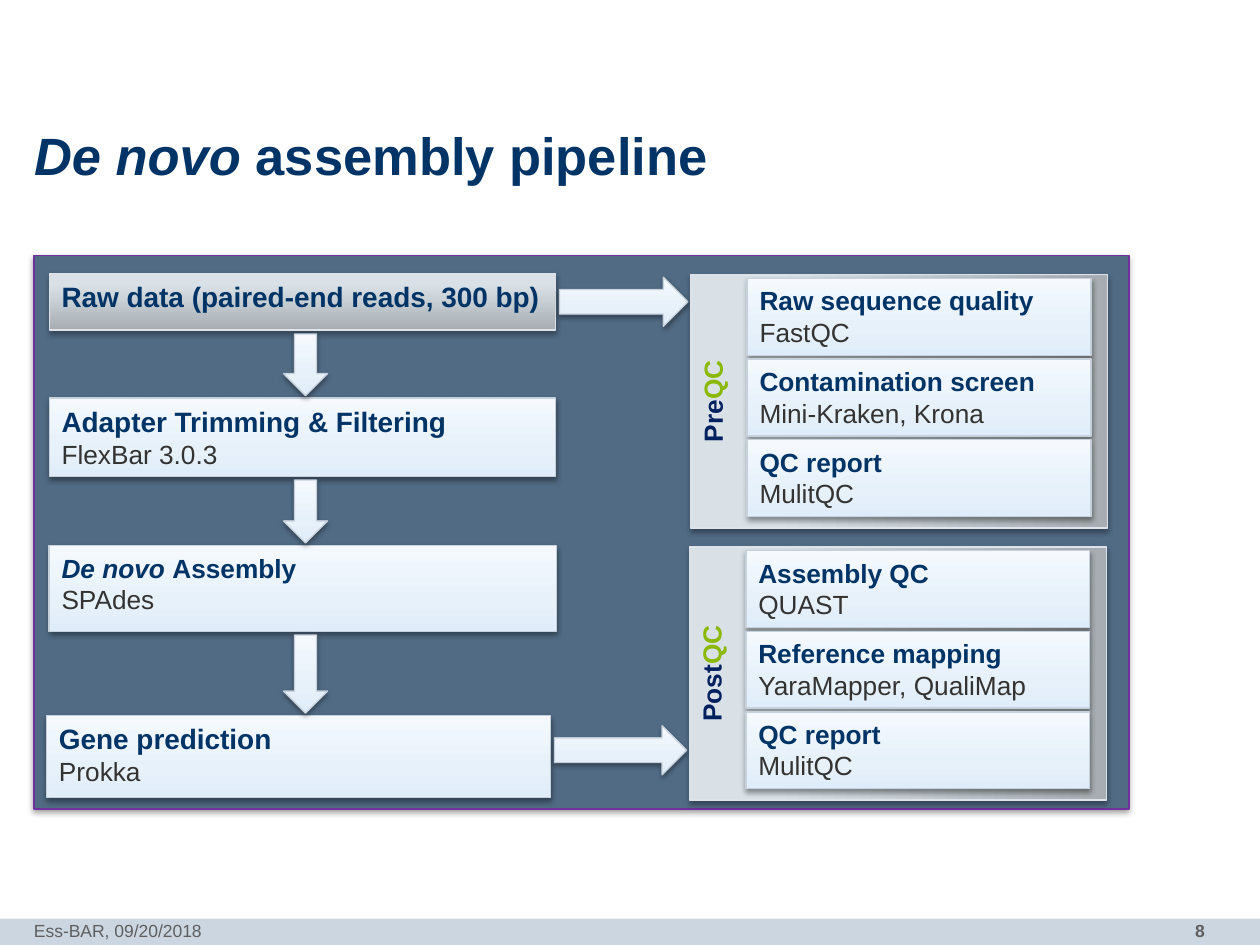
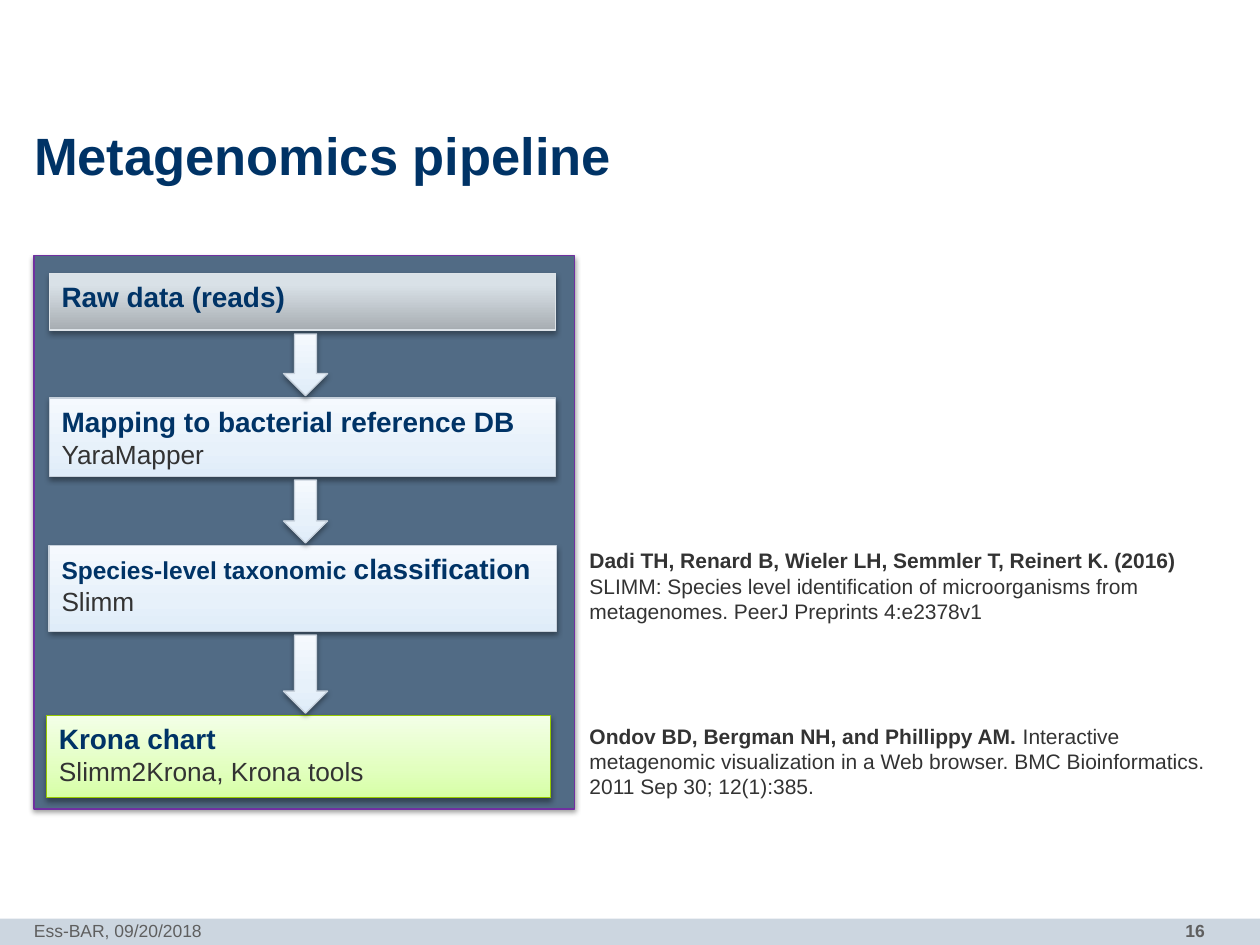
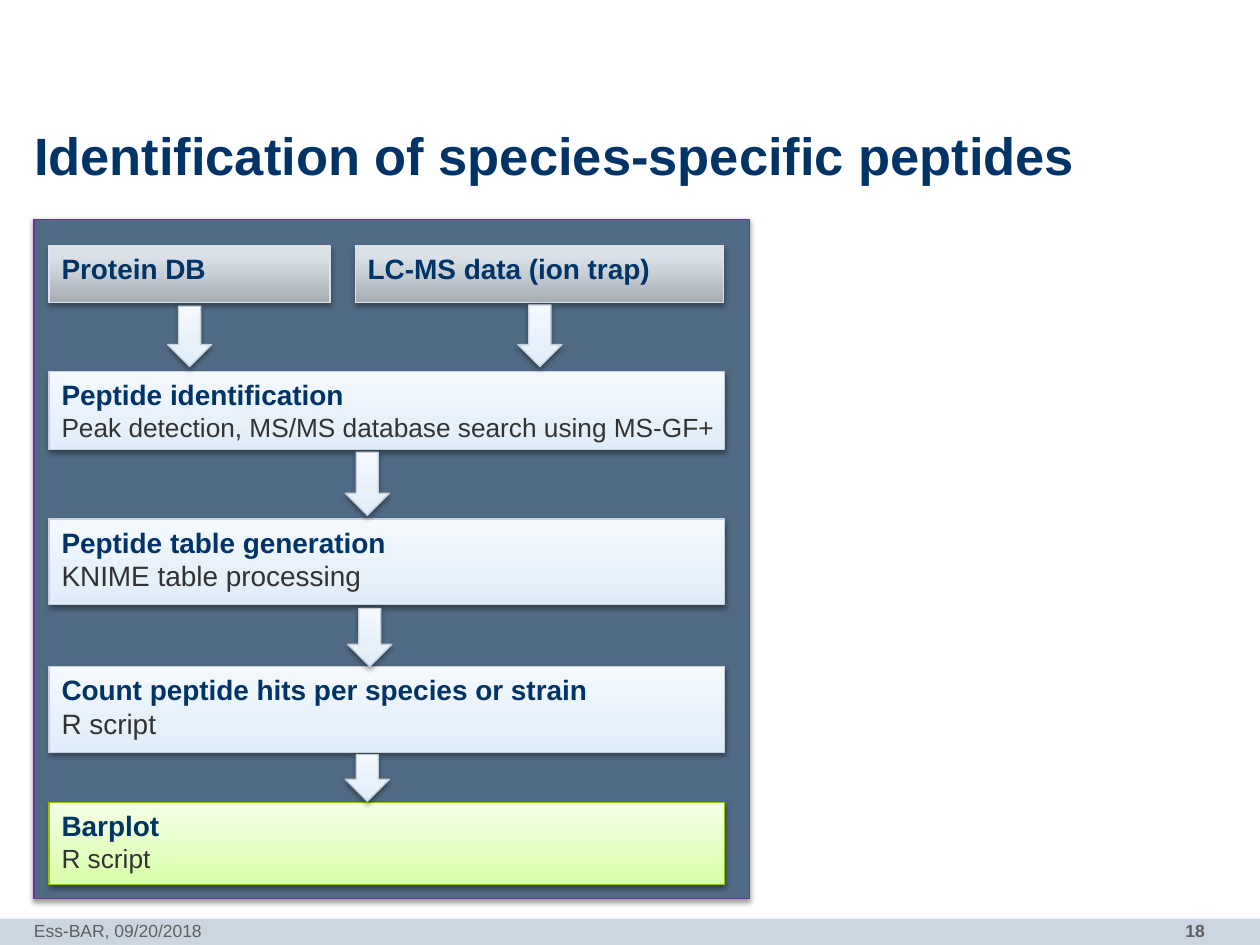
from dataclasses import dataclass

from lxml.etree import SubElement as Sub
from pptx import Presentation
from pptx.dml.color import RGBColor as RGB
from pptx.enum.shapes import MSO_SHAPE as Kind
from pptx.enum.text import MSO_ANCHOR as Anchor, PP_ALIGN as Align
from pptx.oxml.ns import qn
from pptx.util import Inches, Pt


@dataclass(frozen=True)
class Look:
    line: str
    stops: tuple
    alpha: int = 38
    drop: float = 1.6


@dataclass(frozen=True)
class Theme:
    font: str = "Arial"
    navy: str = "003366"
    ink: str = "333333"
    tag: str = "002060"
    lime: str = "8AB900"
    gray: str = "5F5F5F"
    band: str = "CCD6E0"
    title: int = 30
    head: int = 16
    body: int = 15
    sub: int = 14
    note: int = 12
    foot: int = 10
    board: Look = Look("7030A0", ((0, "516B85"),))
    blue: Look = Look("C7D1DC", ((0, "DFECF9"), (35, "E7F1FA"), (100, "F5F9FE")))
    green: Look = Look("96C800", ((0, "D6FFA5"), (35, "E2FFBF"), (100, "F3FFE7")))
    steel: Look = Look("DDE3E8", ((0, "A7ADB2"), (80, "D9E1E7"), (100, "DAE2E9")), 35, 1.8)


class Deck:
    """Builds pipeline slides in one shared style."""

    def __init__(self, theme):
        self.theme = theme
        self.file = Presentation()
        self.file.slide_width, self.file.slide_height = Inches(10), Inches(7.5)
        self.slide = None

    def start(self, title, page):
        t = self.theme
        self.slide = self.file.slides.add_slide(self.file.slide_layouts[6])
        band = self.slide.shapes.add_shape(Kind.RECTANGLE, *map(Inches, (0, 7.29, 10, 0.21)))
        band.shadow.inherit = False
        band.fill.solid()
        band.fill.fore_color.rgb = RGB.from_string(t.band)
        band.line.fill.background()
        num = self.text((8.32, 7.25, 1.34, 0.26), str(page), t.foot, t.gray, True)
        num.paragraphs[0].alignment = Align.RIGHT
        frame = self.text((0.27, 1.03, 9.45, 0.47), title, t.title, t.navy, True)
        frame.margin_left = frame.margin_right = frame.margin_top = frame.margin_bottom = 0
        frame.vertical_anchor = Anchor.MIDDLE
        frame.paragraphs[0].line_spacing = 0.85
        foot = self.text((0.27, 7.25, 6.54, 0.25), "Ess-BAR, 09/20/2018", t.foot, t.gray)
        foot.margin_left = foot.margin_right = 0

    def label(self, para, text, size, color, bold=False):
        font = para.font
        font.name, font.size, font.bold = self.theme.font, Pt(size), bold
        font.color.rgb = RGB.from_string(color)
        for part, style in [(text, {})] if isinstance(text, str) else text:
            run = para.add_run()
            run.text = part
            for key, value in style.items():
                if key == "color":
                    run.font.color.rgb = RGB.from_string(value)
                else:
                    setattr(run.font, key, value)

    def text(self, place, text, size, color, bold=False):
        frame = self.slide.shapes.add_textbox(*map(Inches, place)).text_frame
        frame.word_wrap = True
        self.label(frame.paragraphs[0], text, size, color, bold)
        return frame

    def shape(self, place, look, kind=Kind.RECTANGLE):
        shape = self.slide.shapes.add_shape(kind, *map(Inches, place))
        shape.line.color.rgb = RGB.from_string(look.line)
        shape.line.width = Pt(0.75)
        props = shape.element.spPr
        if len(look.stops) == 1:
            shape.fill.solid()
            shape.fill.fore_color.rgb = RGB.from_string(look.stops[0][1])
        else:
            shape.fill.gradient()
            shape.fill.gradient_angle = 90
            stops = props.find(qn("a:gradFill")).find(qn("a:gsLst"))
            for old in list(stops):
                stops.remove(old)
            for pos, color in look.stops:
                stop = Sub(stops, qn("a:gs"), pos=str(pos * 1000))
                Sub(stop, qn("a:srgbClr"), val=color)
        shape.shadow.inherit = False
        shade = Sub(props.find(qn("a:effectLst")), qn("a:outerShdw"), blurRad=str(Pt(3.1)),
                    dist=str(Pt(look.drop)), dir="5400000", rotWithShape="0")
        black = Sub(shade, qn("a:srgbClr"), val="000000")
        Sub(black, qn("a:alpha"), val=str(look.alpha * 1000))
        return shape

    def box(self, place, head, body="", look=None, size=None, small=None):
        t = self.theme
        frame = self.shape(place, look or t.blue).text_frame
        frame.word_wrap = False
        frame.vertical_anchor = Anchor.TOP
        first = frame.paragraphs[0]
        first.alignment = Align.LEFT
        self.label(first, head, size or t.head, t.navy, True)
        if body:
            para = frame.add_paragraph()
            para.alignment = Align.LEFT
            self.label(para, body, small or t.body, t.ink)

    def down(self, x, y, h):
        self.shape((x, y, 0.35, h), self.theme.blue, Kind.DOWN_ARROW)

    def right(self, x, y, w):
        self.shape((x, y, w, 0.39), self.theme.blue, Kind.RIGHT_ARROW)

    def panel(self, x, y, tag, cards):
        t = self.theme
        wide, high = 3.31, 2.01
        left, top = x + (wide - high) / 2, y - (wide - high) / 2
        panel = self.shape((left, top, high, wide), t.steel)
        panel.rotation = 270
        frame = panel.text_frame
        frame.word_wrap = True
        frame.vertical_anchor = Anchor.TOP
        para = frame.paragraphs[0]
        para.alignment = Align.CENTER
        self.label(para, [(tag, {}), ("QC", {"color": t.lime})], t.body, t.tag, True)
        for i, (head, body) in enumerate(cards):
            self.box((x + 0.45, y + 0.03 + 0.64 * i, 2.73, 0.61), head, body, size=t.body)

    def flow(self, width, raw, trim, core, last, size=None, look=None):
        t = self.theme
        self.shape((0.27, 2.03, width, 4.39), t.board)
        self.box((0.39, 2.17, 4.02, 0.45), raw, look=t.steel)
        self.box((0.39, 3.16, 4.02, 0.62), *trim)
        self.box((0.39, 4.33, 4.03, 0.68), *core, size=size)
        self.box((0.37, 5.68, 4, 0.65), *last, look=look)
        for y, h in ((2.65, 0.49), (3.81, 0.5), (5.04, 0.62)):
            self.down(2.25, y, h)


def novo(deck):
    t = deck.theme
    deck.start([("De novo ", {"italic": True}), ("assembly pipeline", {})], 8)
    deck.flow(8.69, "Raw data (paired-end reads, 300 bp)",
              ("Adapter Trimming & Filtering", "FlexBar 3.0.3"),
              ([("De novo ", {"italic": True}), ("Assembly", {})], "SPAdes"),
              ("Gene prediction", "Prokka"), size=t.body)
    deck.right(4.44, 2.2, 1.02)
    deck.right(4.4, 5.76, 1.05)
    report = ("QC report", "MulitQC")
    deck.panel(5.48, 2.18, "Pre", [("Raw sequence quality", "FastQC"),
                                   ("Contamination screen", "Mini-Kraken, Krona"), report])
    deck.panel(5.47, 4.34, "Post", [("Assembly QC", "QUAST"),
                                    ("Reference mapping", "YaraMapper, QualiMap"), report])


def meta(deck):
    t = deck.theme
    deck.start("Metagenomics pipeline", 16)
    deck.flow(4.29, "Raw data (reads)",
              ("Mapping to bacterial reference DB", "YaraMapper"),
              ([("Species-level taxonomic ", {}), ("classification", {"size": Pt(t.head)})], "Slimm"),
              ("Krona chart", "Slimm2Krona, Krona tools"), size=t.sub, look=t.green)
    cites = (
        (4.3, "Dadi TH, Renard B, Wieler LH, Semmler T, Reinert K. (2016)",
         " SLIMM: Species level identification of microorganisms from metagenomes."
         " PeerJ Preprints 4:e2378v1"),
        (5.69, "Ondov BD, Bergman NH, and Phillippy AM. ",
         "Interactive metagenomic visualization in a Web browser. BMC Bioinformatics. "
         "2011 Sep 30; 12(1):385."),
    )
    for y, names, work in cites:
        deck.text((4.58, y, 5.09, 0.71), [(names, {"bold": True}), (work, {})], t.note, t.ink)


def peptide(deck):
    t = deck.theme
    deck.start("Identification of species-specific peptides", 18)
    deck.shape((0.27, 1.74, 5.68, 5.39), t.board)
    deck.box((0.39, 1.95, 2.23, 0.45), "Protein DB", look=t.steel)
    deck.box((2.82, 1.95, 2.92, 0.45), "LC-MS data (ion trap)", look=t.steel)
    steps = (
        (2.95, 0.62, "Peptide identification",
         "Peak detection, MS/MS database search using MS-GF+", t.blue, t.body),
        (4.12, 0.68, "Peptide table generation", "KNIME table processing", t.blue, t.head),
        (5.29, 0.68, "Count peptide hits per species or strain", "R script", t.blue, t.head),
        (6.37, 0.65, "Barplot", "R script", t.green, t.body),
    )
    for y, h, head, body, look, small in steps:
        deck.box((0.39, y, 5.36, h), head, body, look, small=small)
    for arrow in ((1.33, 2.43, 0.48), (4.11, 2.42, 0.49), (2.74, 3.59, 0.5),
                  (2.76, 4.83, 0.46), (2.74, 5.99, 0.37)):
        deck.down(*arrow)


def main():
    deck = Deck(Theme())
    for build in (novo, meta, peptide):
        build(deck)
    deck.file.save("out.pptx")


if __name__ == "__main__":
    main()
